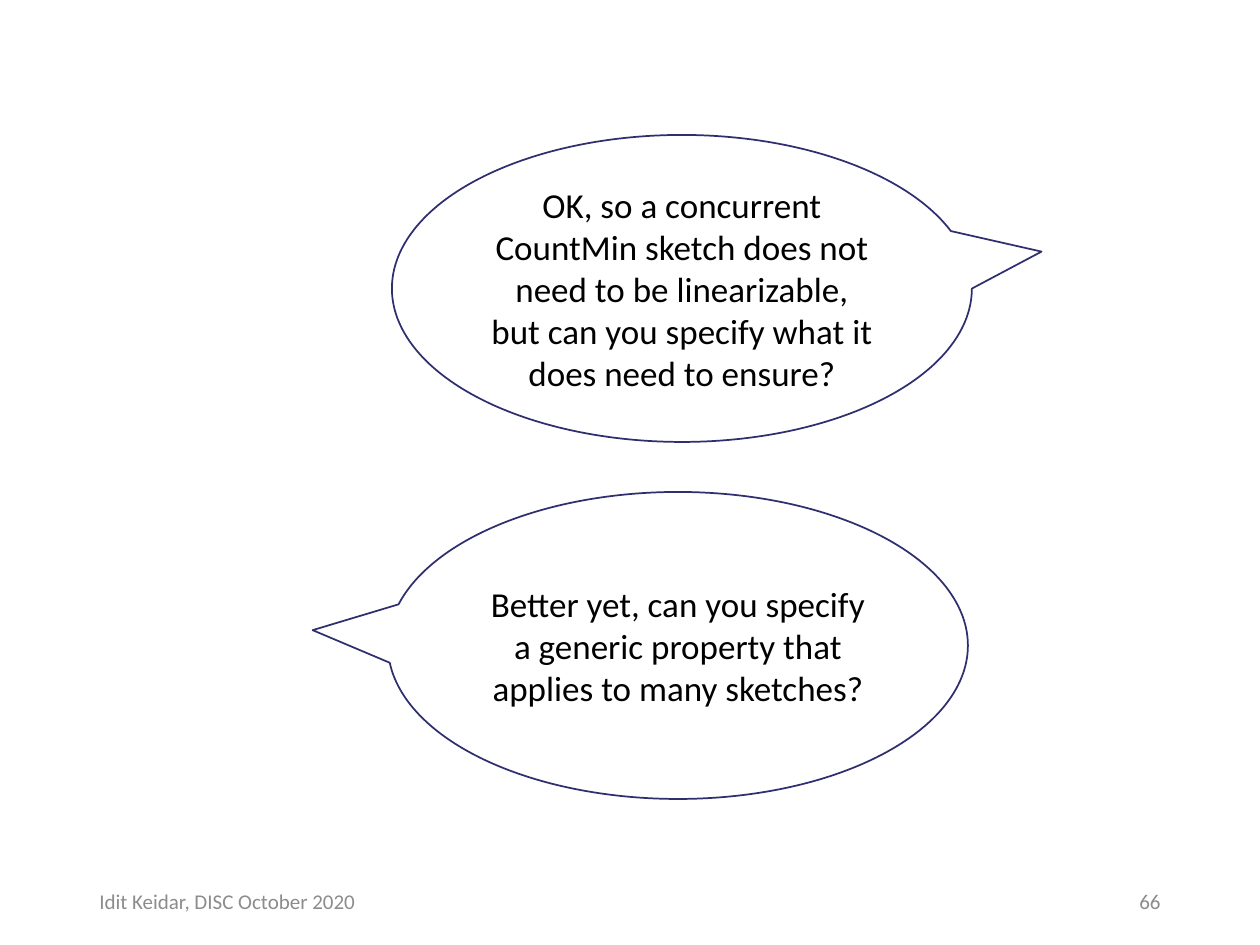
from pptx import Presentation
from pptx.dml.color import RGBColor
from pptx.enum.shapes import MSO_SHAPE as Shape
from pptx.enum.text import MSO_ANCHOR as Anchor, PP_ALIGN as Align
from pptx.util import Emu, Pt

PX_PER_INCH = 126
BUBBLE_SIZE = (580, 307)
FOOTER_TOP, FOOTER_HEIGHT = 876, 50


def px(length):
    return Emu(round(length * 914400 / PX_PER_INCH))


def color(hex_string):
    return RGBColor.from_string(hex_string)


def set_text(shape, text, size, text_color, align):
    frame = shape.text_frame
    frame.word_wrap = True
    frame.vertical_anchor = Anchor.MIDDLE
    frame.text = text
    paragraph = frame.paragraphs[0]
    paragraph.alignment = align
    font = paragraph.runs[0].font
    font.name = "Calibri"
    font.size = Pt(size)
    font.color.rgb = color(text_color)


def add_footer(slide, left, width, text, align):
    box = slide.shapes.add_textbox(
        px(left), px(FOOTER_TOP), px(width), px(FOOTER_HEIGHT))
    set_text(box, text, 12, "8C8C8C", align)


def add_bubble(slide, left, top, tail, text):
    """Add a speech bubble; tail is its tip's offset from the centre, as a share of the size."""
    bubble = slide.shapes.add_shape(
        Shape.OVAL_CALLOUT, px(left), px(top), *map(px, BUBBLE_SIZE))
    bubble.adjustments[0], bubble.adjustments[1] = tail
    bubble.shadow.inherit = False
    bubble.fill.background()
    bubble.line.color.rgb = color("2F2F70")
    bubble.line.width = Pt(1)
    set_text(bubble, text, 20, "000000", Align.CENTER)


def main():
    presentation = Presentation()
    presentation.slide_width, presentation.slide_height = px(1260), px(945)
    slide = presentation.slides.add_slide(presentation.slide_layouts[6])

    add_footer(slide, 87, 756, "Idit Keidar, DISC October 2020", Align.LEFT)
    add_footer(slide, 890, 283, "66", Align.RIGHT)
    add_bubble(slide, 392, 135, (0.62, -0.12),
               "OK, so a concurrent CountMin sketch does not need to be "
               "linearizable, but can you specify what it does need to ensure?")
    add_bubble(slide, 388, 492, (-0.63, -0.05),
               "Better yet, can you specify a generic property that "
               "applies to many sketches?")

    presentation.save("out.pptx")


if __name__ == "__main__":
    main()
